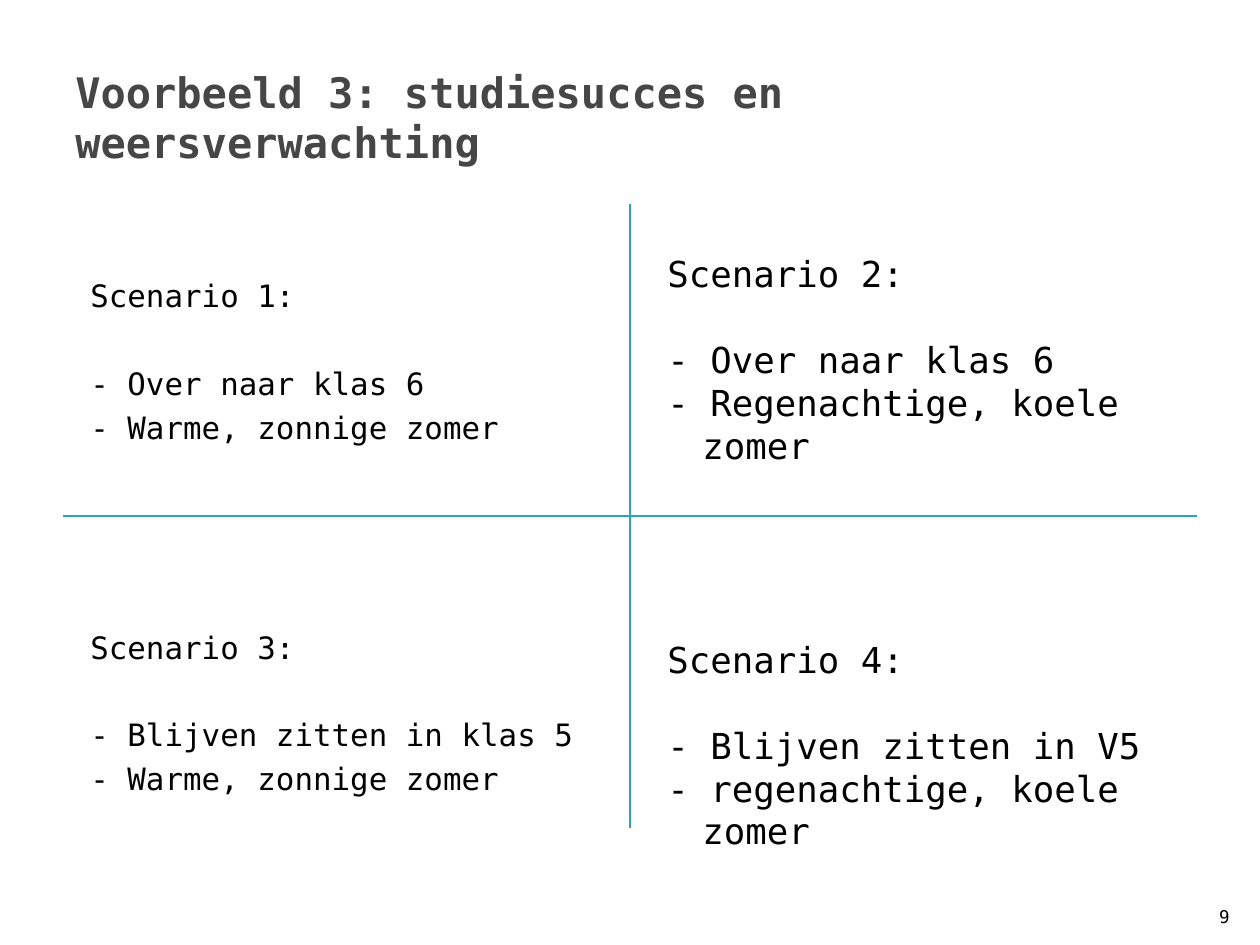
"""Build a slide comparing four scenarios in two columns."""
from lxml import etree
from pptx import Presentation
from pptx.dml.color import RGBColor
from pptx.enum.shapes import MSO_CONNECTOR
from pptx.enum.text import MSO_ANCHOR, PP_ALIGN
from pptx.oxml.ns import qn
from pptx.util import Emu, Pt

STRAIGHT = MSO_CONNECTOR.STRAIGHT
TOP, MIDDLE, BOTTOM = MSO_ANCHOR.TOP, MSO_ANCHOR.MIDDLE, MSO_ANCHOR.BOTTOM
LEFT, RIGHT = PP_ALIGN.LEFT, PP_ALIGN.RIGHT
SCALE = 914400 // 126
COLORS = {"title": "464646", "text": "000000", "rule": "2DA2BF"}
FONT = "DejaVu Sans Mono"
COLUMN_TOP, COLUMN_WIDTH, COLUMN_HEIGHT = 199, 557, 543


def px(length):
    return Emu(length * SCALE)


class SlideBuilder:
    def __init__(self, presentation):
        self.slide = presentation.slides.add_slide(presentation.slide_layouts[6])

    def frame(self, left, top, width, height, anchor):
        shape = self.slide.shapes.add_textbox(px(left), px(top), px(width), px(height))
        shape.text_frame.word_wrap = True
        shape.text_frame.vertical_anchor = anchor
        return shape.text_frame

    def fill_paragraph(self, paragraph, text, size, color="text", bold=False):
        paragraph.text = text
        paragraph.font.name = FONT
        paragraph.font.size = Pt(size)
        paragraph.font.bold = bold
        paragraph.font.color.rgb = RGBColor.from_string(COLORS[color])

    def label(self, box, text, size, anchor, align=LEFT, color="text", bold=False):
        paragraph = self.frame(*box, anchor).paragraphs[0]
        paragraph.alignment = align
        self.fill_paragraph(paragraph, text, size, color, bold)

    def column(self, left, inset, size, gaps, scenarios):
        frame = self.frame(left, COLUMN_TOP, COLUMN_WIDTH, COLUMN_HEIGHT, TOP)
        frame.margin_top = px(inset)
        for number, lines in enumerate(scenarios):
            for text, gap in zip(lines, gaps):
                first = number == 0 and text == lines[0]
                paragraph = frame.paragraphs[0] if first else frame.add_paragraph()
                paragraph.space_before = Pt(0 if first else gap)
                properties = paragraph._p.get_or_add_pPr()
                properties.set("marL", str(px(50)))
                properties.set("indent", str(px(-35)))
                self.fill_paragraph(paragraph, text, size)

    def rule(self, start, end):
        points = [px(value) for value in (*start, *end)]
        connector = self.slide.shapes.add_connector(STRAIGHT, *points)
        connector.line.color.rgb = RGBColor.from_string(COLORS["rule"])
        connector.line.width = Pt(0.75)
        etree.SubElement(connector._element.spPr, qn("a:effectLst"))


def main():
    presentation = Presentation()
    presentation.slide_width, presentation.slide_height = px(1260), px(945)
    builder = SlideBuilder(presentation)
    builder.label((63, 38, 1134, 157), "Voorbeeld 3: studiesucces en weersverwachting",
                  24, MIDDLE, color="title", bold=True)
    builder.column(63, 78, 17.6, (104.5, 29, 4), [
        ("Scenario 1:", "- Over naar klas 6", "- Warme, zonnige zomer"),
        ("Scenario 3:", "- Blijven zitten in klas 5", "- Warme, zonnige zomer"),
    ])
    builder.column(640, 53, 20.4, (98, 24.5, 0), [
        ("Scenario 2:", "- Over naar klas 6", "- Regenachtige, koele zomer"),
        ("Scenario 4:", "- Blijven zitten in V5", "- regenachtige, koele zomer"),
    ])
    builder.rule((1197, 516), (63, 516))
    builder.rule((630, 204), (630, 828))
    builder.label((1192, 883, 50, 50), "9", 10, BOTTOM, RIGHT)
    presentation.save("out.pptx")


if __name__ == "__main__":
    main()
